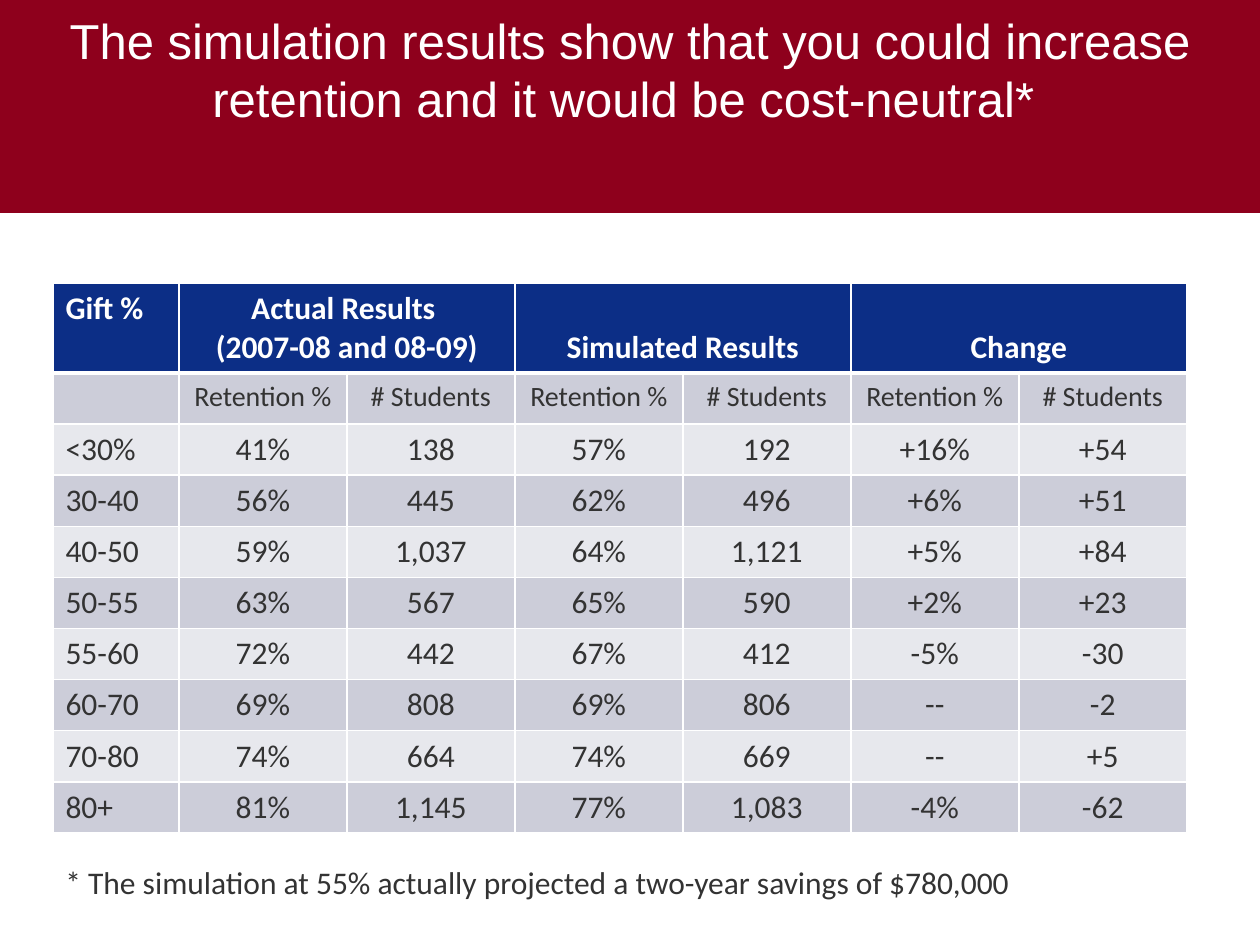
import dataclasses

import lxml.etree
import pptx
import pptx.dml.color
import pptx.enum.text
import pptx.oxml.ns
import pptx.util

Inches = pptx.util.Inches
Align = pptx.enum.text.PP_ALIGN
Anchor = pptx.enum.text.MSO_ANCHOR
AutoSize = pptx.enum.text.MSO_AUTO_SIZE


@dataclasses.dataclass(frozen=True)
class Theme:
    banner: str = "8E001C"
    header: str = "0C2E86"
    bands: tuple = ("CCCDD9", "E7E8ED")
    light: str = "FFFFFF"
    dark: str = "333333"
    title_font: str = "Arial"
    body_font: str = "Calibri"
    title_size: int = 28
    body_size: int = 18
    label_size: int = 16
    rule: int = 1
    header_rule: int = 3


def rgb(value):
    return pptx.dml.color.RGBColor.from_string(value)


def write_text(tf, text, *, font, size, color, bold=False, align=Align.LEFT):
    p = tf.paragraphs[0]
    p.text = text
    p.alignment = align
    for r in p.runs:
        r.font.name = font
        r.font.size = pptx.util.Pt(size)
        r.font.color.rgb = rgb(color)
        r.font.bold = bold


def set_border(cell, side, width, color):
    qn = pptx.oxml.ns.qn
    tc_pr = cell._tc.get_or_add_tcPr()
    ln = lxml.etree.SubElement(tc_pr, qn(f"a:ln{side}"), w=str(pptx.util.Pt(width)))
    fill = lxml.etree.SubElement(ln, qn("a:solidFill"))
    lxml.etree.SubElement(fill, qn("a:srgbClr"), val=color)


class SlideBuilder:
    def __init__(self, prs, theme):
        self.theme = theme
        self.s = prs.slides.add_slide(prs.slide_layouts[5])

    def title(self, text, left, top, width, height):
        t = self.theme
        sp = self.s.shapes.title
        sp.left, sp.top, sp.width, sp.height = map(Inches, (left, top, width, height))
        sp.fill.solid()
        sp.fill.fore_color.rgb = rgb(t.banner)
        tf = sp.text_frame
        tf.word_wrap = True
        tf.auto_size = AutoSize.NONE
        tf.vertical_anchor = Anchor.TOP
        tf.margin_top = Inches(0.08)
        write_text(tf, text, font=t.title_font, size=t.title_size,
                   color=t.light, align=Align.CENTER)

    def cell(self, cell, text, fill, bottom, **style):
        t = self.theme
        for side, width in zip("LRTB", (t.rule, t.rule, t.rule, bottom)):
            set_border(cell, side, width, t.light)
        cell.fill.solid()
        cell.fill.fore_color.rgb = rgb(fill)
        write_text(cell.text_frame, text, font=t.body_font, **style)

    def table(self, groups, labels, rows, left, top, widths, header_height, height):
        t = self.theme
        header = [groups[0]]
        for group in groups[1:]:
            header += [group, ""]
        grid = [header, [""] + labels * (len(groups) - 1)] + rows
        frame = self.s.shapes.add_table(
            len(grid), len(widths), Inches(left), Inches(top),
            Inches(sum(widths)), Inches(height))
        table = frame.table
        for column, width in zip(table.columns, widths):
            column.width = Inches(width)
        row_height = (height - header_height) / (len(grid) - 1)
        for i, values in enumerate(grid):
            table.rows[i].height = Inches(row_height if i else header_height)
            for j, value in enumerate(values):
                self.cell(
                    table.cell(i, j), value,
                    fill=t.bands[(i - 1) % 2] if i else t.header,
                    bottom=t.rule if i else t.header_rule,
                    size=t.label_size if i == 1 else t.body_size,
                    color=t.dark if i else t.light,
                    bold=i == 0,
                    align=Align.CENTER if j else Align.LEFT)
        for j in range(1, len(widths), 2):
            table.cell(0, j).merge(table.cell(0, j + 1))
            table.cell(0, j).vertical_anchor = Anchor.BOTTOM

    def note(self, text, left, top, width, height):
        t = self.theme
        sp = self.s.shapes.add_textbox(*map(Inches, (left, top, width, height)))
        tf = sp.text_frame
        tf.word_wrap = False
        tf.auto_size = AutoSize.SHAPE_TO_FIT_TEXT
        write_text(tf, text, font=t.body_font, size=t.body_size, color=t.dark)


GROUPS = ["Gift %", "Actual Results \v(2007-08 and 08-09)", "Simulated Results", "Change"]
LABELS = ["Retention %", "# Students"]
RESULTS = [
    ["<30%", "41%", "138", "57%", "192", "+16%", "+54"],
    ["30-40", "56%", "445", "62%", "496", "+6%", "+51"],
    ["40-50", "59%", "1,037", "64%", "1,121", "+5%", "+84"],
    ["50-55", "63%", "567", "65%", "590", "+2%", "+23"],
    ["55-60", "72%", "442", "67%", "412", "-5%", "-30"],
    ["60-70", "69%", "808", "69%", "806", "--", "-2"],
    ["70-80", "74%", "664", "74%", "669", "--", "+5"],
    ["80+", "81%", "1,145", "77%", "1,083", "-4%", "-62"],
]


def main():
    prs = pptx.Presentation()
    prs.slide_width, prs.slide_height = Inches(10), Inches(7.5)
    slide = SlideBuilder(prs, Theme())
    slide.title("The simulation results show that you could increase retention "
                "and it would be cost-neutral* ", 0, 0, 10, 1.69)
    slide.table(GROUPS, LABELS, RESULTS, left=0.42, top=2.25,
                widths=[1] + [8 / 6] * 6, header_height=0.7, height=4.35)
    slide.note("* The simulation at 55% actually projected a two-year savings of $780,000",
               0.42, 6.8, 7.91, 0.4)
    prs.save("out.pptx")


if __name__ == "__main__":
    main()
